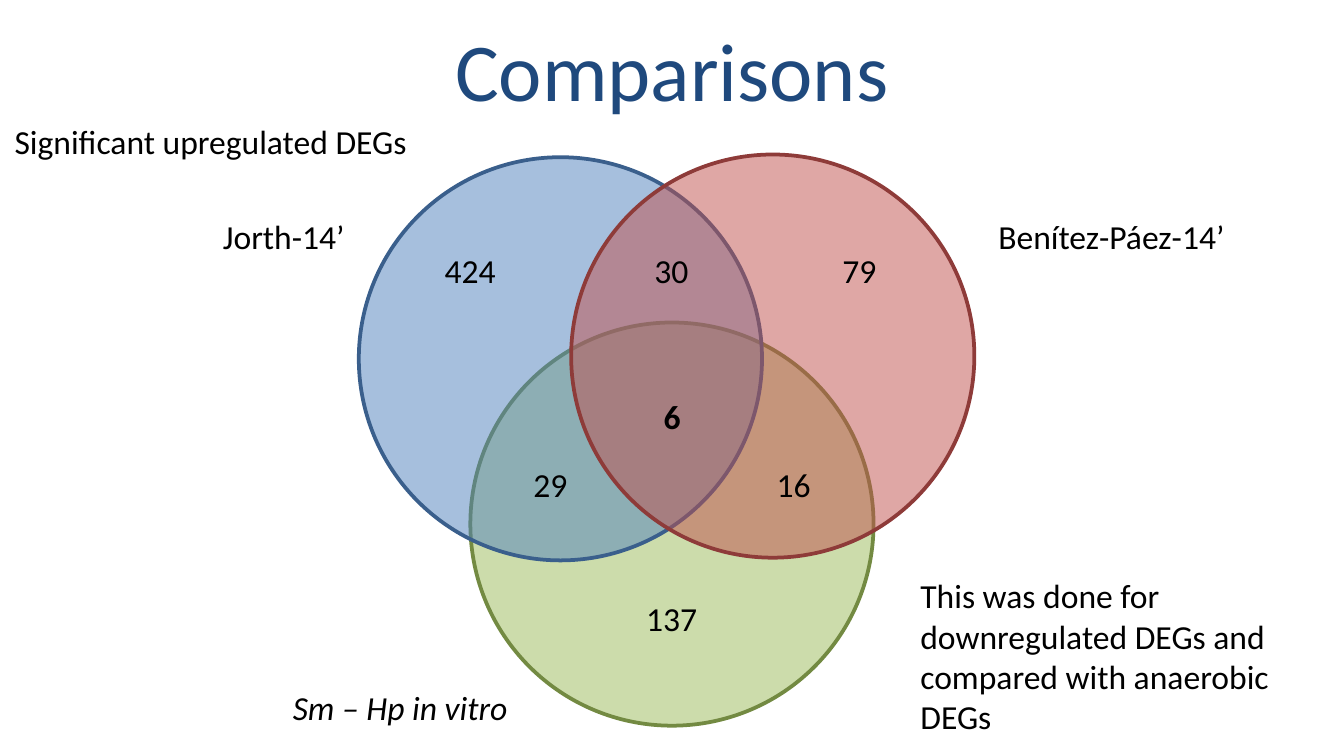
from lxml import etree
from pptx import Presentation
from pptx.dml.color import RGBColor
from pptx.enum.shapes import MSO_SHAPE as Shape
from pptx.enum.text import MSO_ANCHOR as Anchor, MSO_AUTO_SIZE as Fit, PP_ALIGN as Align
from pptx.oxml.ns import qn
from pptx.util import Inches, Pt


def color(code):
    return RGBColor.from_string(code)


def write(frame, text, size=18, code="000000", bold=False, italic=False,
          align=Align.LEFT, anchor=Anchor.TOP, wrap=False, fit=Fit.SHAPE_TO_FIT_TEXT):
    frame.word_wrap = wrap
    frame.auto_size = fit
    frame.vertical_anchor = anchor
    par = frame.paragraphs[0]
    par.alignment = align
    run = par.add_run()
    run.text = text
    font = run.font
    font.name, font.size = "Calibri", Pt(size)
    font.bold, font.italic = bold, italic
    font.color.rgb = color(code)


prs = Presentation()
prs.slide_width = Inches(10)
prs.slide_height = prs.slide_width * 9 // 16
slide = prs.slides.add_slide(prs.slide_layouts[5])

title = slide.shapes.title
title.left, title.top = Inches(0.5), Inches(0.04)
title.width, title.height = Inches(9), Inches(0.94)
write(title.text_frame, "Comparisons", size=44, code="1F497D",
      align=Align.CENTER, anchor=Anchor.MIDDLE, wrap=True, fit=Fit.NONE)

line_h = Inches(0.4)
head = slide.shapes.add_textbox(Inches(0.01), Inches(0.85), Inches(3.18), line_h)
write(head.text_frame, "Significant upregulated DEGs")

# Each set: circle left and top, fill, line, then labels as (text, left, top, width, format)
sets = [
    (3.5, 2.4, "9BBB59", "738A42", [
        ("Sm – Hp in vitro", 2.08, 5.06, 1.82, {"italic": True}),
        ("137", 4.71, 4.4, 0.59, {}),
    ]),
    (2.67, 1.17, "4F81BD", "3A5F8C", [
        ("Jorth-14’", 1.56, 1.56, 1.11, {}),
        ("424", 3.21, 1.81, 0.59, {}),
        ("29", 3.87, 3.4, 0.46, {}),
    ]),
    (4.25, 1.15, "C0504D", "8E3B39", [
        ("79", 6.17, 1.81, 0.46, {}),
        ("16", 5.68, 3.4, 0.46, {}),
        ("30", 4.77, 1.81, 0.46, {}),
        ("6", 4.84, 2.9, 0.33, {"bold": True}),
        ("Benítez-Páez-14’", 7.33, 1.56, 1.9, {}),
    ]),
]
size = Inches(3)
for left, top, fill, edge, labels in sets:
    group = slide.shapes.add_group_shape()
    circle = group.shapes.add_shape(Shape.OVAL, Inches(left), Inches(top), size, size)
    circle.shadow.inherit = False
    circle.fill.solid()
    circle.fill.fore_color.rgb = color(fill)
    tint = circle._element.spPr.find(qn("a:solidFill"))[0]
    etree.SubElement(tint, qn("a:alpha")).set("val", "50000")
    circle.line.color.rgb = color(edge)
    circle.line.width = Pt(2)
    for text, x, y, width, style in labels:
        box = group.shapes.add_textbox(Inches(x), Inches(y), Inches(width), line_h)
        write(box.text_frame, text, **style)

note = slide.shapes.add_textbox(Inches(6.75), Inches(4.23), Inches(3.17), Inches(1.31))
write(note.text_frame, "This was done for downregulated DEGs and compared with anaerobic DEGs",
      wrap=True)

prs.save("out.pptx")
